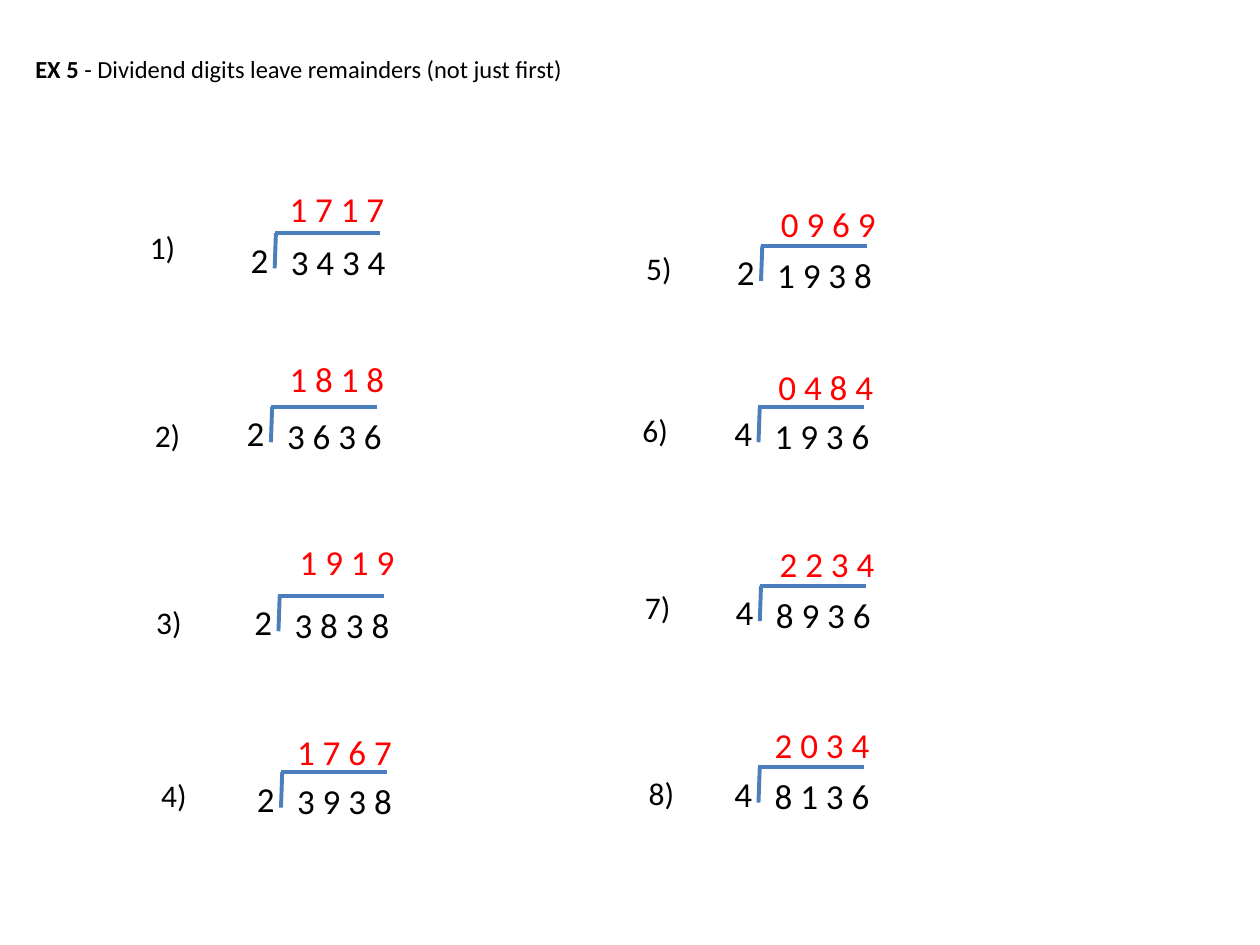
from lxml.etree import SubElement
from pptx import Presentation
from pptx.dml.color import RGBColor
from pptx.enum.shapes import MSO_CONNECTOR
from pptx.enum.text import MSO_ANCHOR, MSO_AUTO_SIZE, PP_ALIGN
from pptx.oxml.ns import qn
from pptx.util import Inches, Pt

BLACK = RGBColor(0x00, 0x00, 0x00)
RED = RGBColor(0xFF, 0x00, 0x00)
BLUE = RGBColor(0x4B, 0x7E, 0xBC)
FONT = "Calibri"

# label, label position, bracket corner, divisor, dividend, quotient, quotient position
PROBLEMS = [
    ("1)", (1.09, 1.76), (2.18, 1.85), "2", "3 4 3 4", "1 7 1 7", (2.2, 1.44)),
    ("2)", (1.13, 3.25), (2.15, 3.23), "2", "3 6 3 6", "1 8 1 8", (2.2, 2.79)),
    ("3)", (1.14, 4.74), (2.21, 4.73), "2", "3 8 3 8", "1 9 1 9", (2.28, 4.24)),
    ("4)", (1.18, 6.11), (2.23, 6.13), "2", "3 9 3 8", "1 7 6 7", (2.26, 5.75)),
    ("5)", (5.03, 1.93), (6.04, 1.95), "2", "1 9 3 8", "0 9 6 9", (6.1, 1.56)),
    ("6)", (5.0, 3.21), (6.02, 3.23), "4", "1 9 3 6", "0 4 8 4", (6.08, 2.85)),
    ("7)", (5.02, 4.62), (6.03, 4.65), "4", "8 9 3 6", "2 2 3 4", (6.09, 4.26)),
    ("8)", (5.05, 6.09), (6.02, 6.09), "4", "8 1 3 6", "2 0 3 4", (6.05, 5.69)),
]


def style_paragraph(para, size, color):
    """Set the font shared by all runs of a paragraph."""
    para.font.name = FONT
    para.font.size = Pt(size)
    para.font.color.rgb = color


def add_text(shapes, text, left, top, width, size=20, color=BLACK, wrap=False):
    """Add a one-line text box that fits its text."""
    height = 0.44 if size == 20 else 0.4
    box = shapes.add_textbox(Inches(left), Inches(top), Inches(width), Inches(height))
    frame = box.text_frame
    frame.word_wrap = wrap
    frame.auto_size = MSO_AUTO_SIZE.SHAPE_TO_FIT_TEXT
    para = frame.paragraphs[0]
    para.text = text
    style_paragraph(para, size, color)


def add_line(shapes, start, end):
    """Add one stroke of a division bracket."""
    points = [Inches(value) for value in (*start, *end)]
    line = shapes.add_connector(MSO_CONNECTOR.STRAIGHT, *points)
    line.line.color.rgb = BLUE
    line.line.width = Pt(2.25)
    SubElement(line._element.spPr, qn("a:effectLst"))


def add_division(page, corner, divisor, dividend):
    """Add a grouped division bracket with its divisor and dividend."""
    left, top = corner
    shapes = page.shapes.add_group_shape().shapes
    add_line(shapes, (left, top + 0.28), (left + 0.01, top))
    add_line(shapes, (left + 0.84, top), corner)
    add_text(shapes, dividend, left + 0.03, top + 0.01, 0.96)
    add_text(shapes, divisor, left - 0.29, top - 0.01, 0.34)


def set_title(page):
    """Place and format the exercise heading."""
    title = page.shapes.title
    title.left, title.top = Inches(0.18), Inches(0.38)
    title.width, title.height = Inches(4.45), Inches(0.34)
    frame = title.text_frame
    frame.word_wrap = False
    frame.auto_size = MSO_AUTO_SIZE.NONE
    frame.vertical_anchor = MSO_ANCHOR.TOP
    para = frame.paragraphs[0]
    para.alignment = PP_ALIGN.LEFT
    style_paragraph(para, 14, BLACK)
    heading = (
        ("EX 5 ", True),
        ("- Dividend digits leave remainders (not just first)", False),
    )
    for text, bold in heading:
        span = para.add_run()
        span.text = text
        span.font.bold = bold


def main():
    """Build the division exercise slide."""
    deck = Presentation()
    deck.slide_width, deck.slide_height = Inches(10), Inches(7.5)
    page = deck.slides.add_slide(deck.slide_layouts.get_by_name("Title Only"))
    set_title(page)
    for label, label_at, corner, divisor, dividend, quotient, quotient_at in PROBLEMS:
        add_division(page, corner, divisor, dividend)
        add_text(page.shapes, label, *label_at, 0.42, size=18, wrap=True)
        add_text(page.shapes, quotient, *quotient_at, 0.96, color=RED)
    deck.save("out.pptx")


if __name__ == "__main__":
    main()
